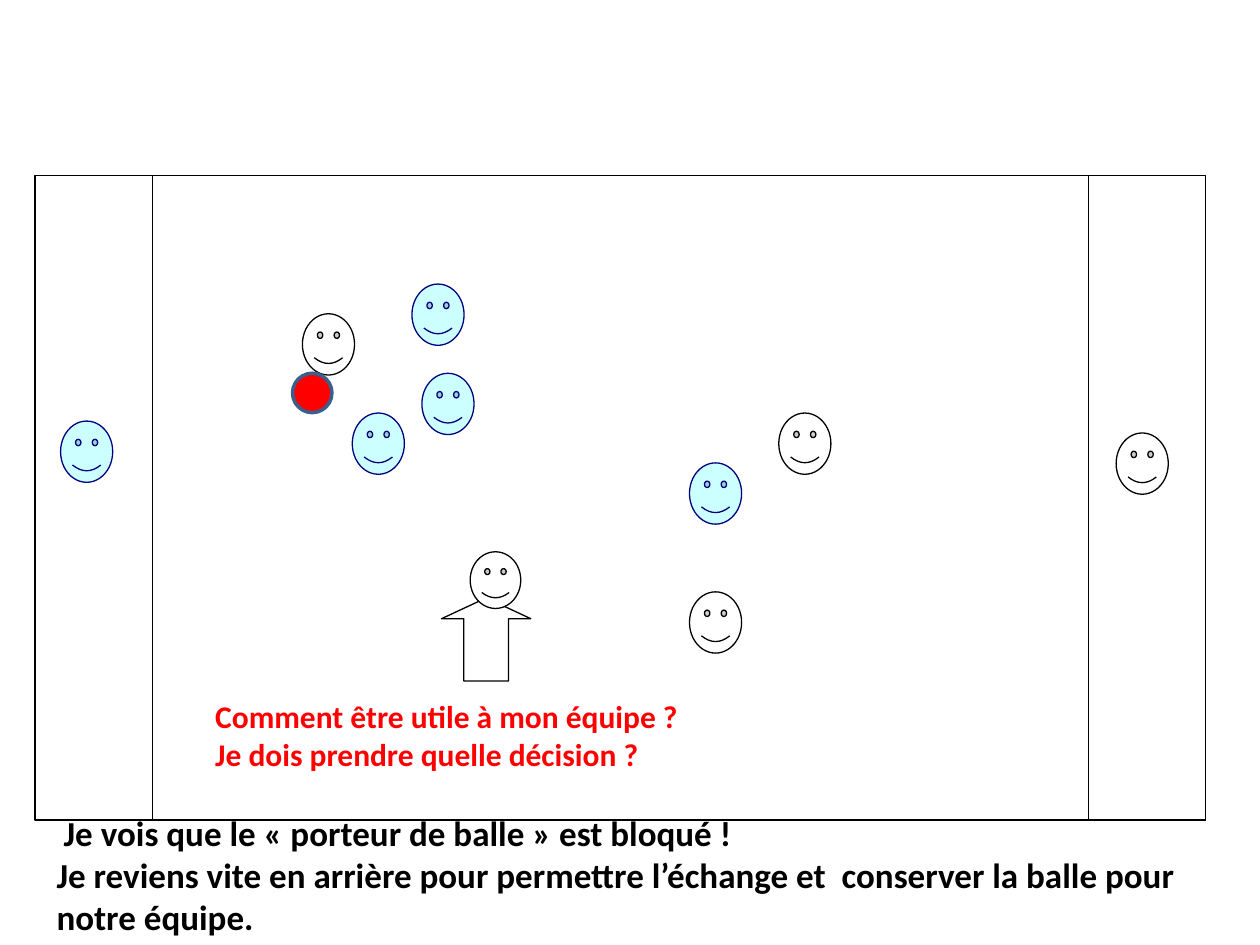
"""Build a ball-game slide: pitch, two teams, the ball and the player's choice."""
from pptx import Presentation
from pptx.dml.color import RGBColor
from pptx.enum.shapes import MSO_SHAPE
from pptx.util import Pt

RECT, FACE = MSO_SHAPE.RECTANGLE, MSO_SHAPE.SMILEY_FACE
OVAL, ARROW = MSO_SHAPE.OVAL, MSO_SHAPE.UP_ARROW

BLACK = RGBColor(0, 0, 0)
WHITE = RGBColor(255, 255, 255)
RED = RGBColor(255, 0, 0)
CYAN = RGBColor(0xCC, 0xFF, 0xFF)
NAVY = RGBColor(0, 0, 0x80)
STEEL = RGBColor(0x3A, 0x5F, 0x8C)

TOP, HIGH, ZONE = 100.1, 368.6, 67
LEFT, RIGHT = 20, 689
FACE_W, FACE_H = 29.8, 35

WHITES = [(394, 338.2), (637.8, 247.4), (445, 236), (172.8, 179.3)]
BLUES = [(394, 264.5), (34.6, 240.6), (241.1, 213.3), (235.4, 162.3), (201.3, 236)]

ASK = [
    [("Comment être utile à mon équipe ?", 18)],
    [("Je dois prendre quelle décision ?", 18)],
]
PLAN = [
    [(" ", 18), ("Je vois que le «\u00a0porteur de balle\u00a0» est bloqué !", 20)],
    [("Je reviens vite en arrière pour permettre l’échange et  conserver "
      "la balle pour notre équipe.", 20)],
]
NOTES = [(ASK, RED, (115.9, 394.6, 283.7, 51.1)),
         (PLAN, BLACK, (25.2, 460.1, 668.9, 79.9))]


def draw(slide, kind, box, fill=WHITE, line=BLACK, width=0.75):
    shape = slide.shapes.add_shape(kind, *map(Pt, box))
    shape.shadow.inherit = False
    shape.fill.solid()
    shape.fill.fore_color.rgb = fill
    shape.line.color.rgb = line
    shape.line.width = Pt(width)
    return shape


def write(slide, lines, color, box):
    frame = slide.shapes.add_textbox(*map(Pt, box)).text_frame
    frame.word_wrap = True
    for i, line in enumerate(lines):
        para = frame.add_paragraph() if i else frame.paragraphs[0]
        for text, size in line:
            run = para.add_run()
            run.text = text
            style = {"name": "Calibri", "size": Pt(size), "bold": bool(text.strip())}
            for key, value in style.items():
                setattr(run.font, key, value)
            run.font.color.rgb = color


def main():
    deck = Presentation()
    deck.slide_width, deck.slide_height = Pt(720), Pt(540)
    slide = deck.slides.add_slide(deck.slide_layouts[6])

    inner = LEFT + ZONE
    draw(slide, RECT, (inner, TOP, RIGHT - inner, HIGH))
    for x in (LEFT, RIGHT - ZONE):
        draw(slide, RECT, (x, TOP, ZONE, HIGH))

    for team, fill, line in ((WHITES, WHITE, BLACK), (BLUES, CYAN, NAVY)):
        for x, y in team:
            draw(slide, FACE, (x, y, FACE_W, FACE_H), fill, line)

    draw(slide, OVAL, (167.2, 213.3, 22.5, 22.5), RED, STEEL, 2)
    body = draw(slide, ARROW, (252.3, 341.7, 51, 47.5))
    body.adjustments[0], body.adjustments[1] = 0.5, 0.25
    draw(slide, FACE, (268.7, 315.3, 28.9, 32.4))

    for note in NOTES:
        write(slide, *note)
    deck.save("out.pptx")


if __name__ == "__main__":
    main()
